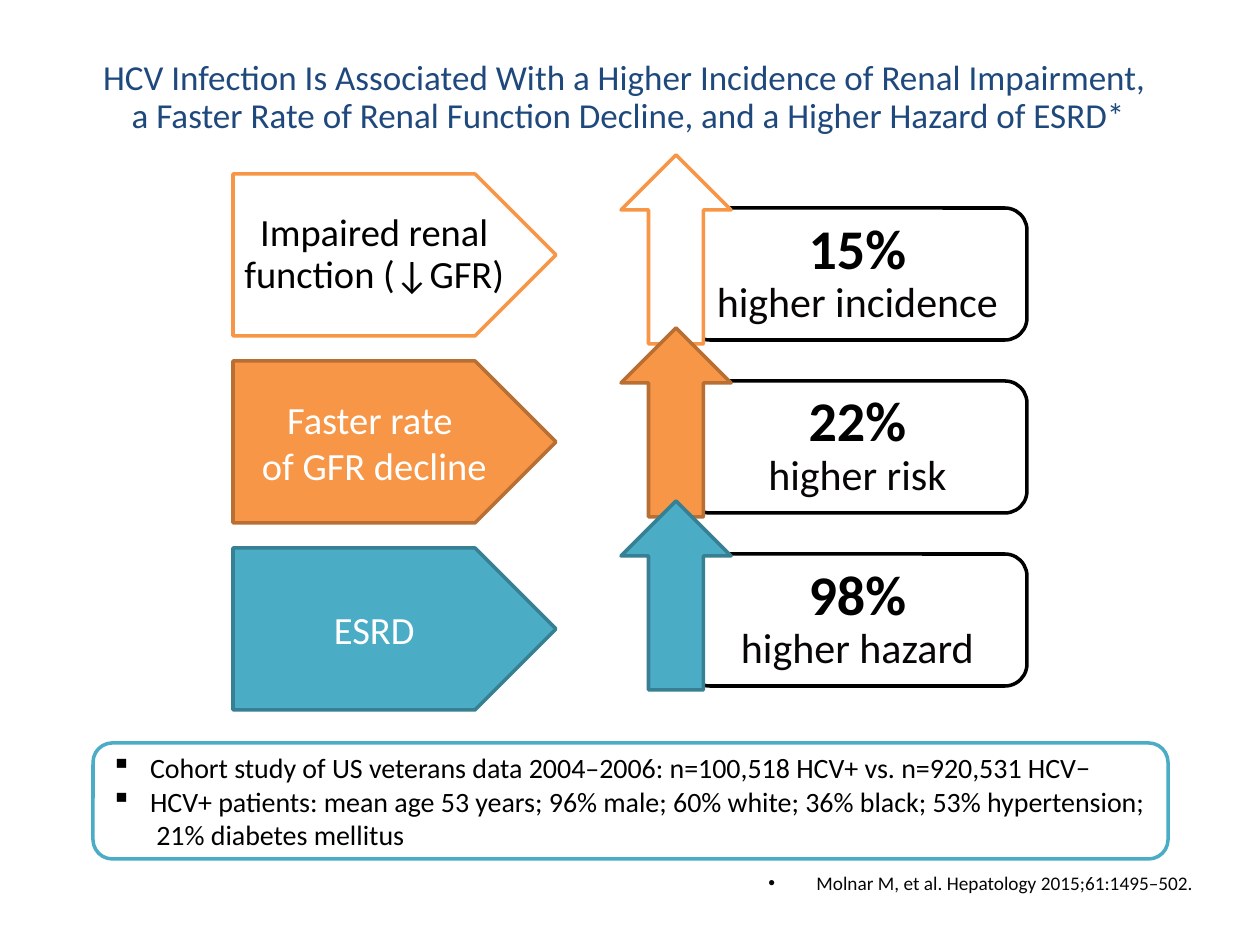
from dataclasses import dataclass

from lxml import etree
from pptx import Presentation
from pptx.dml.color import RGBColor
from pptx.enum.shapes import MSO_SHAPE
from pptx.enum.text import MSO_ANCHOR, MSO_AUTO_SIZE, PP_ALIGN
from pptx.oxml.ns import qn
from pptx.util import Emu, Pt

PLATE, CARD, ARROW = MSO_SHAPE.PENTAGON, MSO_SHAPE.ROUNDED_RECTANGLE, MSO_SHAPE.UP_ARROW
TOP, MIDDLE, BOTTOM = MSO_ANCHOR.TOP, MSO_ANCHOR.MIDDLE, MSO_ANCHOR.BOTTOM
LEFT, CENTER, RIGHT = PP_ALIGN.LEFT, PP_ALIGN.CENTER, PP_ALIGN.RIGHT
GROW, FIXED = MSO_AUTO_SIZE.SHAPE_TO_FIT_TEXT, MSO_AUTO_SIZE.NONE


@dataclass(frozen=True)
class Theme:
    font: str = "Calibri"
    navy: str = "1F497D"
    black: str = "000000"
    ink: str = "070605"
    white: str = "FFFFFF"
    orange: str = "F79646"
    orange_edge: str = "B76F34"
    teal: str = "4BACC6"
    teal_edge: str = "377F92"
    title: int = 20
    label: int = 22
    percent: int = 32
    effect: int = 24
    note: int = 16
    citation: int = 11
    line: int = 2


THEME = Theme()

TITLE = ("HCV Infection Is Associated With a Higher Incidence of Renal Impairment, \v"
         "a Faster Rate of Renal Function Decline, and a Higher Hazard of ESRD*")
CITATION = "Molnar M, et al. Hepatology 2015;61:1495–502."
# label lines, label spacing, percent, effect, fill, edge, label colour
OUTCOMES = [
    (["Impaired renal", "function (↓GFR)"], 0.9, "15%", "higher incidence",
     THEME.white, THEME.orange, THEME.black),
    (["Faster rate ", "of GFR decline"], 1.0, "22%", "higher risk",
     THEME.orange, THEME.orange_edge, THEME.white),
    (["ESRD"], 1.0, "98%", "higher hazard",
     THEME.teal, THEME.teal_edge, THEME.white),
]
NOTES = [
    "Cohort study of US veterans data 2004–2006: n=100,518 HCV+ vs. n=920,531 HCV−",
    "HCV+ patients: mean age 53 years; 96% male; 60% white; 36% black; "
    "53% hypertension;\v 21% diabetes mellitus",
]

# Left, top, width, height in px; the first row of each column
TITLE_AT = (55, 73, 1147, 69)
CITATION_AT = (58, 864, 1148, 37)
NOTES_AT = (93, 743, 1075, 116)
PLATE_AT, PLATE_STEP = (233, 174, 323, 162), 187
CARD_AT, ARROW_AT, RISK_STEP = (688, 208, 339, 132), (621, 155, 110, 189), 173
NOTE_INDENT, CITATION_INDENT = 39, 48


def px(length):
    return Emu(round(length * 914400 / 126))


def place(shape, at):
    shape.left, shape.top, shape.width, shape.height = map(px, at)


def row_at(first, step, row):
    left, top, width, height = first
    return left, top + row * step, width, height


def add_block(page, kind, at, fill, edge):
    block = page.shapes.add_shape(kind, *map(px, at))
    block.shadow.inherit = False
    block.fill.solid()
    block.fill.fore_color.rgb = RGBColor.from_string(fill)
    block.line.color.rgb = RGBColor.from_string(edge)
    block.line.width = Pt(THEME.line)
    return block


def write(shape, lines, anchor, align, spacing=1.0, auto_size=FIXED, wrap=True):
    """Fill a shape with lines of (text, size, colour, bold)."""
    frame = shape.text_frame
    frame.word_wrap = wrap
    frame.auto_size = auto_size
    frame.vertical_anchor = anchor
    for index, (text, size, colour, bold) in enumerate(lines):
        para = frame.add_paragraph() if index else frame.paragraphs[0]
        para.text = text
        para.alignment = align
        para.line_spacing = spacing
        para.font.name = THEME.font
        para.font.size = Pt(size)
        para.font.bold = bold
        para.font.color.rgb = RGBColor.from_string(colour)
    return frame


def add_bullet(para, mark, indent):
    props = para._p.get_or_add_pPr()
    props.set("marL", str(px(indent)))
    props.set("indent", str(-px(indent)))
    bullet = etree.Element(qn("a:buChar"), char=mark)
    following = props.find(qn("a:defRPr"))
    if following is None:
        props.append(bullet)
    else:
        following.addprevious(bullet)


def add_outcome(page, row, outcome):
    labels, spacing, percent, effect, fill, edge, colour = outcome
    plate = add_block(page, PLATE, row_at(PLATE_AT, PLATE_STEP, row), fill, edge)
    frame = write(plate, [(label, THEME.label, colour, False) for label in labels],
                  MIDDLE, CENTER, spacing, wrap=False)
    frame.margin_left = frame.margin_right = px(15)

    card = add_block(page, CARD, row_at(CARD_AT, RISK_STEP, row), THEME.white, THEME.black)
    write(card, [(percent, THEME.percent, THEME.black, True),
                 (effect, THEME.effect, THEME.ink, False)], TOP, CENTER, 0.9, GROW)

    add_block(page, ARROW, row_at(ARROW_AT, RISK_STEP, row), fill, edge)


def main():
    deck = Presentation()
    deck.slide_width, deck.slide_height = px(1260), px(945)
    page = deck.slides.add_slide(deck.slide_layouts[1])

    title, citation = page.shapes.title, page.placeholders[1]
    place(title, TITLE_AT)
    write(title, [(TITLE, THEME.title, THEME.navy, False)], BOTTOM, CENTER, 0.9)
    place(citation, CITATION_AT)
    frame = write(citation, [(CITATION, THEME.citation, THEME.ink, False)], BOTTOM, RIGHT)
    add_bullet(frame.paragraphs[0], "•", CITATION_INDENT)

    for row, outcome in enumerate(OUTCOMES):
        add_outcome(page, row, outcome)

    notes = add_block(page, CARD, NOTES_AT, THEME.white, THEME.teal)
    frame = write(notes, [(note, THEME.note, THEME.black, False) for note in NOTES],
                  MIDDLE, LEFT, auto_size=GROW)
    for para in frame.paragraphs:
        add_bullet(para, "▪", NOTE_INDENT)

    deck.save("out.pptx")


if __name__ == "__main__":
    main()
